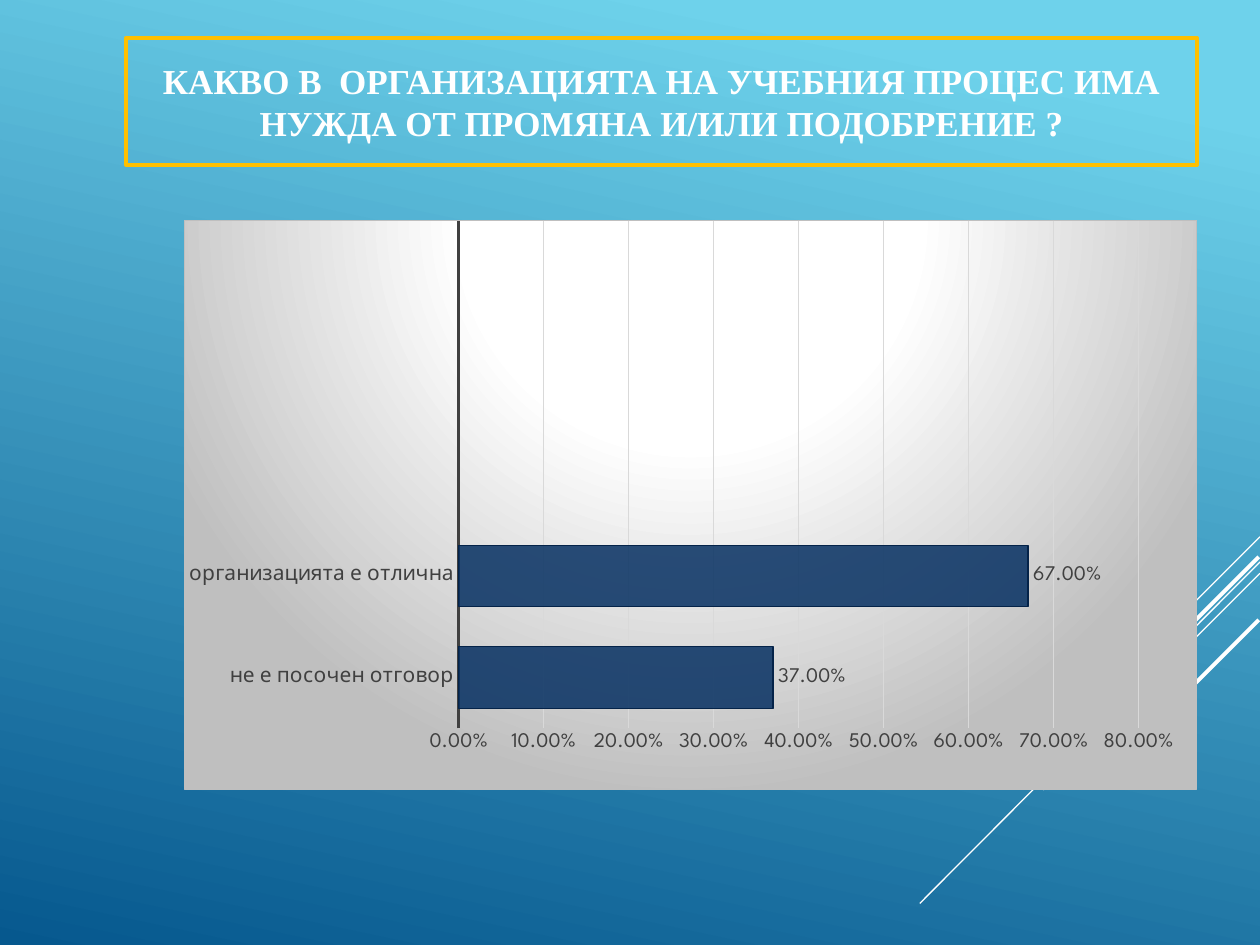
from lxml import etree
from pptx import Presentation
from pptx.chart.data import CategoryChartData
from pptx.dml.color import RGBColor
from pptx.enum.chart import XL_CHART_TYPE as CT, XL_LABEL_POSITION as LP, XL_TICK_MARK as TM
from pptx.enum.shapes import MSO_CONNECTOR as CONN
from pptx.enum.text import MSO_ANCHOR, PP_ALIGN
from pptx.oxml import parse_xml
from pptx.oxml.ns import nsdecls, qn
from pptx.util import Inches, Pt

# Content
TITLE = "КАКВО В  ОРГАНИЗАЦИЯТА НА УЧЕБНИЯ ПРОЦЕС ИМА НУЖДА ОТ ПРОМЯНА И/ИЛИ ПОДОБРЕНИЕ ?"
ANSWERS = [("не е посочен отговор", 0.37), ("организацията е отлична", 0.67),
           ("", None), ("", None), ("", None)]
# Diagonal decoration: x1, y1, x2, y2, width
RAYS = [(10, 4.26, 9.17, 5.09, 0.75), (10, 4.46, 7.3, 7.17, 0.75),
        (10, 4.55, 8.28, 6.27, 0.75), (9.99, 4.42, 8.42, 5.99, 2.25),
        (9.99, 4.92, 8.85, 6.06, 2.25)]
TITLE_BOX = (1, 0.3, 8.5, 1.01)
CHART_BOX = (1.46, 1.74, 8.04, 4.53)
PLOT = {"x": 0.271, "y": 0, "w": 0.672, "h": 0.893}

THEME = {
    "bg": [(0.1, "6ED2EB"), (1, "06588E")], "white": "FFFFFF", "frame": "FFC000",
    "bar": "052F61", "bar_line": "042349", "ink": "404040", "grid": "D9D9D9",
    "panel": "BFBFBF", "title_font": "Times New Roman", "chart_font": "League Spartan",
    "title_size": 20, "label_size": 12,
}


def rgb(name):
    return RGBColor.from_string(THEME[name])


def set_line(line, color, width):
    line.color.rgb = rgb(color)
    line.width = Pt(width)


def set_font(font, face, size, color, bold=False):
    font.name, font.size, font.bold = THEME[face], Pt(THEME[size]), bold
    font.color.rgb = rgb(color)


def set_text(tf, text, align=PP_ALIGN.CENTER, before=0, **font):
    tf.word_wrap = True
    tf.vertical_anchor = MSO_ANCHOR.MIDDLE
    p = tf.paragraphs[0]
    p.alignment, p.space_before = align, Pt(before)
    r = p.add_run()
    r.text = text
    set_font(r.font, **font)


prs = Presentation()
prs.slide_width, prs.slide_height = Inches(10), Inches(7.5)
slide = prs.slides.add_slide(prs.slide_layouts[5])

# Background
fill = slide.background.fill
fill.gradient()
fill.gradient_angle = 360 - 102
for stop, (pos, color) in zip(fill.gradient_stops, THEME["bg"]):
    stop.position = pos
    stop.color.rgb = RGBColor.from_string(color)

# Diagonal rays
for *ends, width in RAYS:
    ray = slide.shapes.add_connector(CONN.STRAIGHT, *map(Inches, ends))
    set_line(ray.line, "white", width)
    etree.SubElement(ray._element.spPr, qn("a:effectLst"))

# Framed title
title = slide.shapes.title
title.left, title.top, title.width, title.height = map(Inches, TITLE_BOX)
set_line(title.line, "frame", 2.25)
set_text(title.text_frame, TITLE, before=5.8, face="title_font",
         size="title_size", color="white", bold=True)
# Keep the frame on top of the rays
slide.shapes._spTree.append(title._element)

# Bar chart
data = CategoryChartData(number_format="0.00%")
data.categories = [name for name, _ in ANSWERS]
data.add_series("Series 1", [value for _, value in ANSWERS])
chart = slide.shapes.add_chart(CT.BAR_CLUSTERED, *map(Inches, CHART_BOX), data).chart
chart.has_legend = chart.has_title = False
label_font = {"face": "chart_font", "size": "label_size", "color": "ink"}
set_font(chart.font, **label_font)

cat, val = chart.category_axis, chart.value_axis
for axis in (cat, val):
    axis.major_tick_mark = axis.minor_tick_mark = TM.NONE
    set_font(axis.tick_labels.font, **label_font)
set_line(cat.format.line, "ink", 1.5)
val.format.line.fill.background()
set_line(val.major_gridlines.format.line, "grid", 0.75)
val.minimum_scale, val.maximum_scale, val.major_unit = 0, 0.8, 0.1
val.tick_labels.number_format = "0.00%"
val.tick_labels.number_format_is_linked = False

# Bars and their labels
plot = chart.plots[0]
plot.gap_width, plot.vary_by_categories = 65, False
bars = plot.series[0]
bars.format.fill.solid()
bars.format.fill.fore_color.rgb = rgb("bar")
bar_color = bars._element.find(qn("c:spPr")).find(".//" + qn("a:srgbClr"))
etree.SubElement(bar_color, qn("a:alpha")).set("val", "85000")
set_line(bars.format.line, "bar_line", 0.75)
labels = bars.data_labels
labels.show_value, labels.position = True, LP.OUTSIDE_END
labels.number_format, labels.number_format_is_linked = "0.00%", False
set_font(labels.font, **label_font)

# Plot area position
area = chart._chartSpace.chart.plotArea
for old in area.findall(qn("c:layout")):
    area.remove(old)
sizes = "".join(f'<c:{key} val="{size}"/>' for key, size in PLOT.items())
area.insert(0, parse_xml(
    f'<c:layout {nsdecls("c")}><c:manualLayout><c:layoutTarget val="inner"/>'
    f'<c:xMode val="edge"/><c:yMode val="edge"/>{sizes}</c:manualLayout></c:layout>'))

# Radial panel behind the chart
stops = "".join(f'<a:gs pos="{pos * 1000}"><a:srgbClr val="{THEME[color]}"/></a:gs>'
                for pos, color in [(0, "white"), (39, "white"), (100, "panel")])
chart._chartSpace.chart.addnext(parse_xml(
    f'<c:spPr {nsdecls("c", "a")}><a:gradFill><a:gsLst>{stops}</a:gsLst>'
    '<a:path path="circle"><a:fillToRect l="50000" t="-80000" r="50000" b="180000"/></a:path>'
    f'</a:gradFill><a:ln w="{Pt(0.75)}"><a:solidFill><a:srgbClr val="{THEME["panel"]}"/>'
    '</a:solidFill></a:ln></c:spPr>'))

prs.save("out.pptx")
